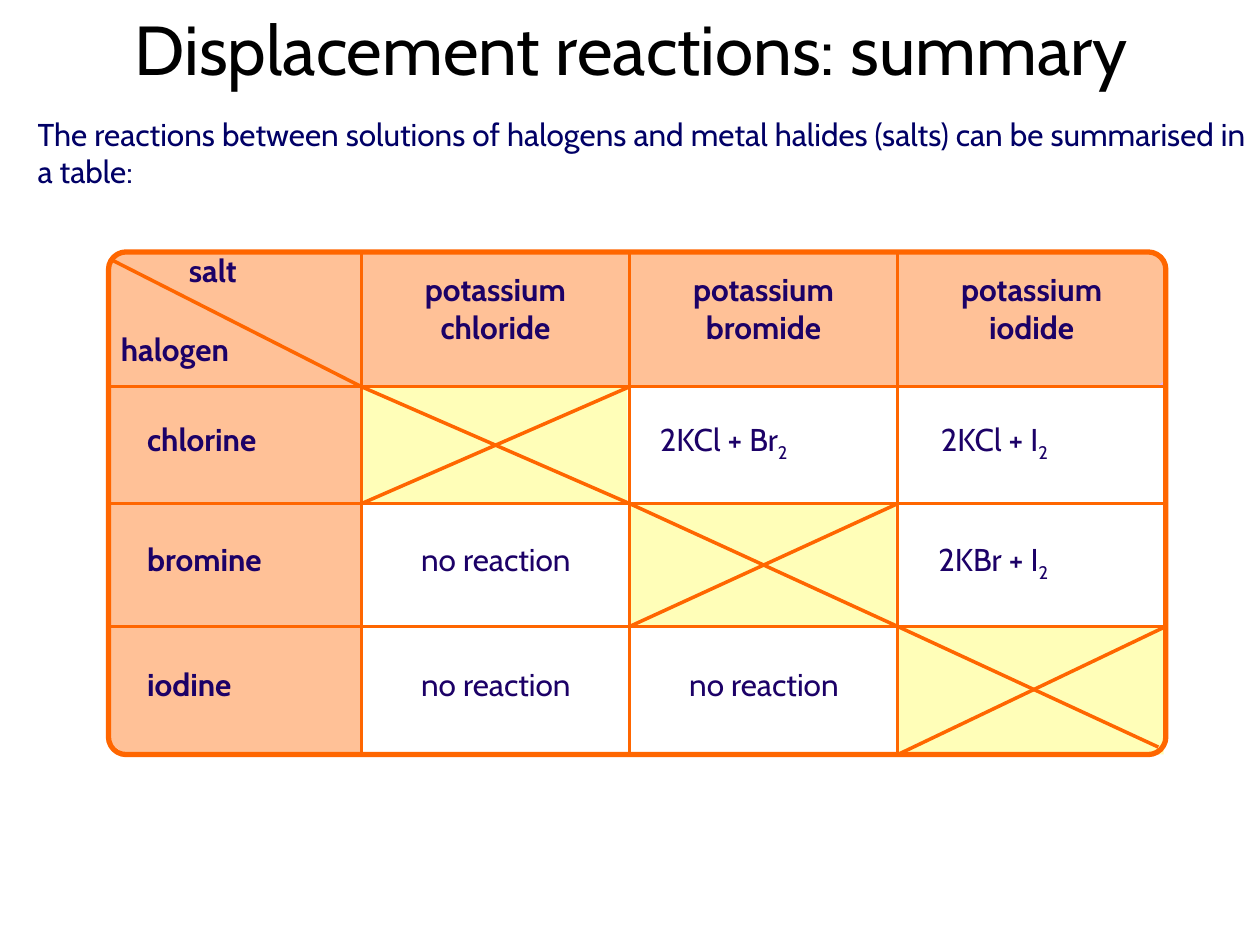
"""Build the summary slide of halogen displacement reactions."""
from dataclasses import dataclass

from lxml import etree
from pptx import Presentation
from pptx.dml.color import RGBColor
from pptx.enum.shapes import MSO_CONNECTOR, MSO_SHAPE
from pptx.enum.text import MSO_ANCHOR, PP_ALIGN
from pptx.oxml.ns import qn
from pptx.util import Pt

RECTANGLE, ROUNDED = MSO_SHAPE.RECTANGLE, MSO_SHAPE.ROUNDED_RECTANGLE
STRAIGHT = MSO_CONNECTOR.STRAIGHT
LEFT, CENTER = PP_ALIGN.LEFT, PP_ALIGN.CENTER
TOP, MIDDLE = MSO_ANCHOR.TOP, MSO_ANCHOR.MIDDLE


@dataclass(frozen=True)
class Theme:
    font: str = "Cabin"
    title_size: float = 39.6
    body_size: float = 18
    title: str = "000000"
    intro: str = "010066"
    label: str = "1C0167"
    rule: str = "FF6600"
    header: str = "FFC197"
    corner: str = "E1B7F7"
    blocked: str = "FFFEB8"


theme = Theme()
deck = Presentation()
deck.slide_width, deck.slide_height = Pt(720), Pt(540)
page = deck.slides.add_slide(deck.slide_layouts[6])


def add_text(text, left, top, width, height, align=LEFT, bold=False,
             color=theme.label, size=theme.body_size, anchor=TOP):
    """Add a text box; characters after an underscore become a subscript."""
    box = page.shapes.add_textbox(Pt(left), Pt(top), Pt(width), Pt(height))
    frame = box.text_frame
    frame.word_wrap = True
    frame.vertical_anchor = anchor
    para = frame.paragraphs[0]
    base, _, subscript = text.partition("_")
    para.text = base
    para.alignment = align
    para.font.name = theme.font
    para.font.size = Pt(size)
    para.font.bold = bold
    para.font.color.rgb = RGBColor.from_string(color)
    if subscript:
        span = para.add_run()
        span.text = subscript
        span.font._element.set("baseline", "-25000")


def add_rule(start_x, start_y, end_x, end_y):
    """Add a straight table rule."""
    rule = page.shapes.add_connector(
        STRAIGHT, Pt(start_x), Pt(start_y), Pt(end_x), Pt(end_y))
    rule.line.color.rgb = RGBColor.from_string(theme.rule)
    rule.line.width = Pt(2)
    etree.SubElement(rule._element.spPr, qn("a:effectLst"))


add_text("Displacement reactions: summary", 36.7, 0, 648, 54.7, CENTER,
         color=theme.title, size=theme.title_size, anchor=MIDDLE)
add_text("The reactions between solutions of halogens and metal halides (salts) "
         "can be summarised in a table:", 14.4, 61.9, 705.6, 51.1,
         color=theme.intro)

table_left, first_column, column_width = 62, 206.6, 153.2
columns = [first_column + column_width * index for index in range(4)]
table_right = columns[-1]
table_top, table_bottom = 144, 431.2
rows = [221, 287.8, 358, table_bottom]

panels = [
    (RECTANGLE, columns[index], rows[index], column_width - 1.2,
     rows[index + 1] - rows[index], theme.blocked, None)
    for index in reversed(range(3))
] + [
    (RECTANGLE, 195.8, 418, 10.8, 13, theme.header, None),
    (ROUNDED, 61.2, 158.4, 145, 272.8, theme.header, 0.108),
    (RECTANGLE, 659.5, 213.3, 7.2, 7.2, theme.corner, None),
    (ROUNDED, 61.2, table_top, 606, 76.5, theme.header, 0.108),
]
for kind, left, top, width, height, fill, rounding in panels:
    panel = page.shapes.add_shape(kind, Pt(left), Pt(top), Pt(width), Pt(height))
    panel.shadow.inherit = False
    panel.fill.solid()
    panel.fill.fore_color.rgb = RGBColor.from_string(fill)
    panel.line.fill.background()
    if rounding:
        panel.adjustments[0] = rounding

for column in columns[:3]:
    add_rule(column, table_top, column, table_bottom)
for row in rows[:3]:
    add_rule(table_left, row, table_right, row)

outline = page.shapes.add_shape(
    ROUNDED, Pt(table_left), Pt(table_top),
    Pt(table_right - table_left), Pt(table_bottom - table_top))
outline.adjustments[0] = 0.035
outline.shadow.inherit = False
outline.fill.background()
outline.line.color.rgb = RGBColor.from_string(theme.rule)
outline.line.width = Pt(3)

add_rule(63.4, 148.3, first_column, rows[0])
for index, inset in enumerate((0, 0, 4.3)):
    left, right = columns[index:index + 2]
    top, bottom = rows[index:index + 2]
    add_rule(left, top, right - inset, bottom - inset)
    add_rule(right, top, left, bottom)

add_text("salt", 100.8, 139.7, 115, 29, bold=True)
add_text("halogen", table_left, 185, 115, 36, bold=True)
for column, salt in zip(columns, ("chloride", "bromide", "iodide")):
    add_text(f"potassium\v{salt}", column + 5.2, 150.8, 142.6, 64.8, CENTER, True)

label_tops = (236.5, 305, 376.3)
for top, halogen in zip(label_tops, ("chlorine", "bromine", "iodine")):
    add_text(halogen, 77, top, 115, 36, bold=True)

formulas = [
    ("2KCl + Br_2", 370, 0, 132.5),
    ("2KCl + I_2", 530.6, 0, 116.6),
    ("2KBr + I_2", 529.2, 1, 119.5),
]
for formula, left, row, width in formulas:
    add_text(formula, left, label_tops[row], width, 36)
for column, row in ((0, 1), (0, 2), (1, 2)):
    add_text("no reaction", columns[column] + 4.4, label_tops[row], 144.7, 36, CENTER)

deck.save("out.pptx")
